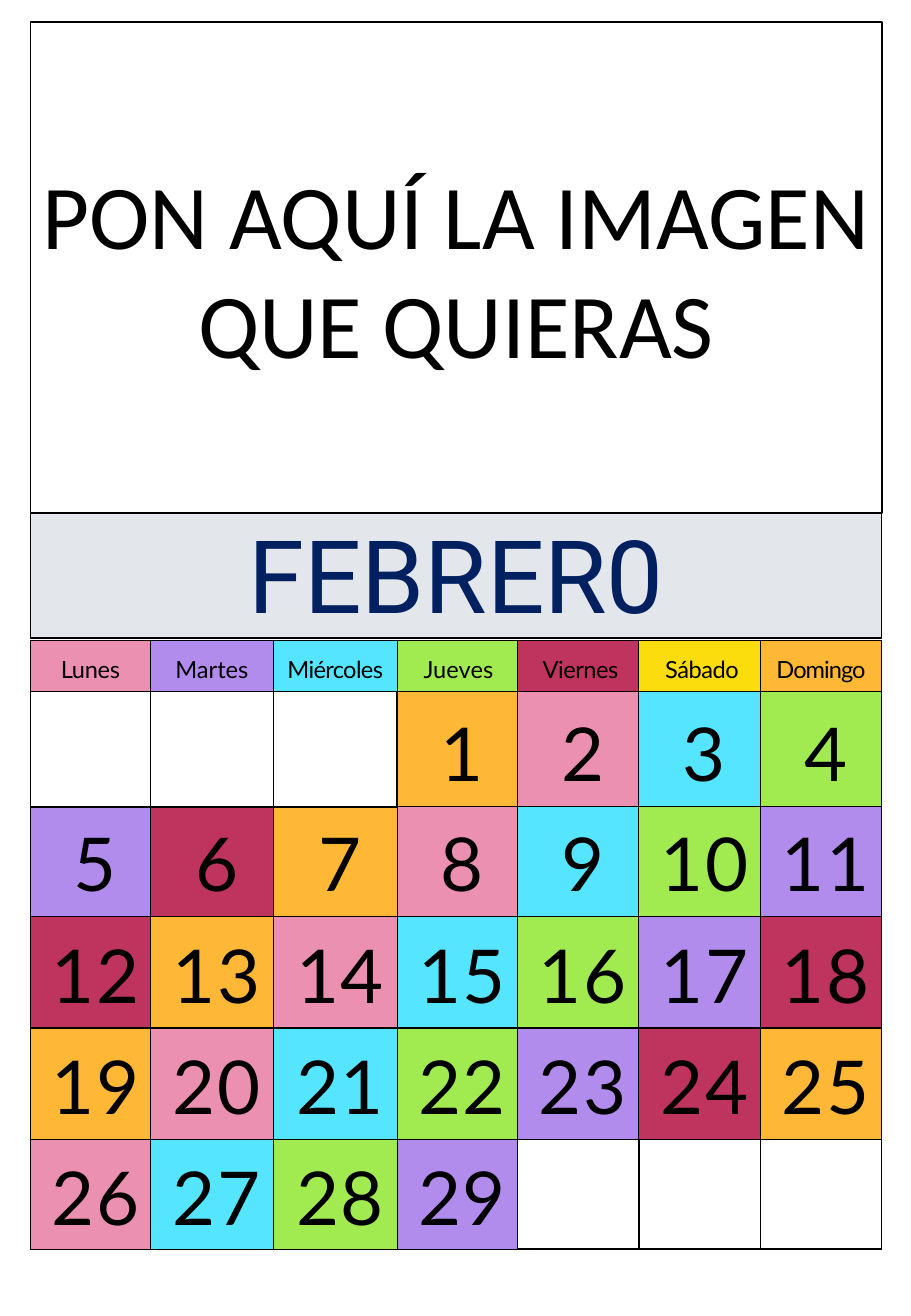
from dataclasses import dataclass

from lxml.etree import SubElement
from pptx import Presentation
from pptx.dml.color import RGBColor
from pptx.enum.shapes import MSO_SHAPE
from pptx.enum.text import MSO_ANCHOR, PP_ALIGN
from pptx.oxml.ns import qn
from pptx.util import Inches, Pt


@dataclass(frozen=True)
class Theme:
    """Colours, fonts and type sizes of the calendar."""
    ink: str = "000000"
    paper: str = "FFFFFF"
    band: str = "E3E6EB"
    navy: str = "002060"
    orange: str = "FFB836"
    pink: str = "EB90B0"
    cyan: str = "55E5FF"
    green: str = "A1EB51"
    purple: str = "B18CEC"
    crimson: str = "BE345E"
    yellow: str = "FBDD0D"
    photo_font: str = "Calibri"
    month_font: str = "Roboto"
    day_font: str = "Lato"
    photo_size: int = 54
    month_size: int = 60
    weekday_size: int = 14
    day_size: int = 44
    thin: float = 0.75
    thick: float = 1


T = Theme()
DAY_COLORS = (T.orange, T.pink, T.cyan, T.green, T.purple, T.crimson)
WEEKDAYS = (
    ("Lunes", T.pink, -0.2, 0),
    ("Martes", T.purple, 0, 0),
    ("Miércoles", T.cyan, -0.4, 0),
    ("Jueves", T.green, 0, 0.02),
    ("Viernes", T.crimson, -0.3, 0.04),
    ("Sábado", T.yellow, -0.3, 0.04),
    ("Domingo", T.orange, -0.6, 0),
)
COL_WIDTHS = (0.99, 1.01, 1.02, 0.99, 1, 1, 1)
ROW_HEIGHTS = (0.42, 0.95, 0.9, 0.92, 0.92, 0.9)
WEEK_INSETS = (0.06, 0.02, 0.04, 0.04, 0.04)
FIRST_COLUMN, LAST_DAY = 3, 29


def set_all(obj, values):
    """Set every attribute named in a dict."""
    for name, value in values.items():
        setattr(obj, name, value)


def paint(fill, color):
    """Give a fill one solid colour."""
    fill.solid()
    fill.fore_color.rgb = RGBColor.from_string(color)


def write(tf, text, font, size, color, before=0, indent=0, spacing=0):
    """Write one centred paragraph."""
    p = tf.paragraphs[0]
    set_all(p, {"alignment": PP_ALIGN.CENTER, "space_before": Pt(before)})
    p._p.get_or_add_pPr().set("marL", str(Inches(indent)))
    r = p.add_run()
    r.text = text
    set_all(r.font, {"name": font, "size": Pt(size)})
    r.font.color.rgb = RGBColor.from_string(color)
    r._r.get_or_add_rPr().set("spc", str(round(spacing * 100)))


def style_cell(cell, fill, widths, top=0.05):
    """Set the borders (left, right, top, bottom), fill and insets of a cell."""
    tc_pr = cell._tc.get_or_add_tcPr()
    for side, width in zip("LRTB", widths):
        ln = SubElement(tc_pr, qn(f"a:ln{side}"), w=str(Pt(width)))
        solid = SubElement(ln, qn("a:solidFill"))
        SubElement(solid, qn("a:srgbClr"), val=T.ink)
    paint(cell.fill, fill)
    set_all(cell, {
        "margin_left": 0, "margin_right": 0, "margin_bottom": 0,
        "margin_top": Inches(top), "vertical_anchor": MSO_ANCHOR.MIDDLE,
    })


def add_grid(s, box, cols, rows):
    """Add an unbanded table whose columns and rows share the box."""
    left, top, width, height = box
    table = s.shapes.add_table(len(rows), len(cols), *box).table
    set_all(table, {"first_row": False, "horz_banding": False})
    for col, share in zip(table.columns, cols):
        col.width = round(width * share / sum(cols))
    for row, share in zip(table.rows, rows):
        row.height = round(height * share / sum(rows))
    return table


def photo_area(s, box):
    """Draw the frame reserved for a picture."""
    sp = s.shapes.add_shape(MSO_SHAPE.RECTANGLE, *box)
    sp.shadow.inherit = False
    paint(sp.fill, T.paper)
    paint(sp.line.fill, T.ink)
    sp.line.width = Pt(T.thick)
    tf = sp.text_frame
    set_all(tf, {"word_wrap": True, "vertical_anchor": MSO_ANCHOR.MIDDLE})
    write(tf, "PON AQUÍ LA IMAGEN QUE QUIERAS", T.photo_font, T.photo_size, T.ink)


def month_band(s, box):
    """Draw the band with the name of the month."""
    cell = add_grid(s, box, (1,), (1,)).cell(0, 0)
    style_cell(cell, T.band, (T.thin, T.thin, T.thin, T.thick))
    write(cell.text_frame, "FEBRER0", T.month_font, T.month_size, T.navy, 4.2)


def day_number(row, col):
    """Return the day in a grid cell, or None where the cell is empty."""
    day = (row - 1) * len(COL_WIDTHS) + col - FIRST_COLUMN + 1
    return day if 1 <= day <= LAST_DAY else None


def is_blank(row, col):
    """Tell whether a grid position is an empty day cell."""
    inside = 1 <= row < len(ROW_HEIGHTS) and 0 <= col < len(COL_WIDTHS)
    return inside and day_number(row, col) is None


def border_widths(row, col):
    """Thicken the sides that touch an empty day cell."""
    sides = ((row, col - 1), (row, col + 1), (row - 1, col), (row + 1, col))
    return [T.thick if is_blank(row, col) or is_blank(*side) else T.thin
            for side in sides]


def month_grid(s, box):
    """Draw the weekday header and the weeks below it."""
    table = add_grid(s, box, COL_WIDTHS, ROW_HEIGHTS)
    for col, (name, color, spacing, indent) in enumerate(WEEKDAYS):
        cell = table.cell(0, col)
        style_cell(cell, color, border_widths(0, col))
        write(cell.text_frame, name, T.day_font, T.weekday_size, T.ink,
              4.2, indent, spacing)
        for row, inset in enumerate(WEEK_INSETS, 1):
            cell, day = table.cell(row, col), day_number(row, col)
            fill = DAY_COLORS[(day - 1) % len(DAY_COLORS)] if day else T.paper
            style_cell(cell, fill, border_widths(row, col), inset)
            if day:
                write(cell.text_frame, str(day), T.day_font, T.day_size, T.ink,
                      4.8, 0.08, 1)


def main():
    """Build the calendar page."""
    prs = Presentation()
    set_all(prs, {"slide_width": Inches(7.5), "slide_height": Inches(10.83)})
    s = prs.slides.add_slide(prs.slide_layouts[6])
    left, width = Inches(0.25), Inches(7.01)
    regions = (
        (month_band, 4.22, 1.03),
        (month_grid, 5.27, sum(ROW_HEIGHTS)),
        (photo_area, 0.18, 4.04),
    )
    for draw, top, height in regions:
        draw(s, (left, Inches(top), width, Inches(height)))
    prs.save("out.pptx")


if __name__ == "__main__":
    main()
